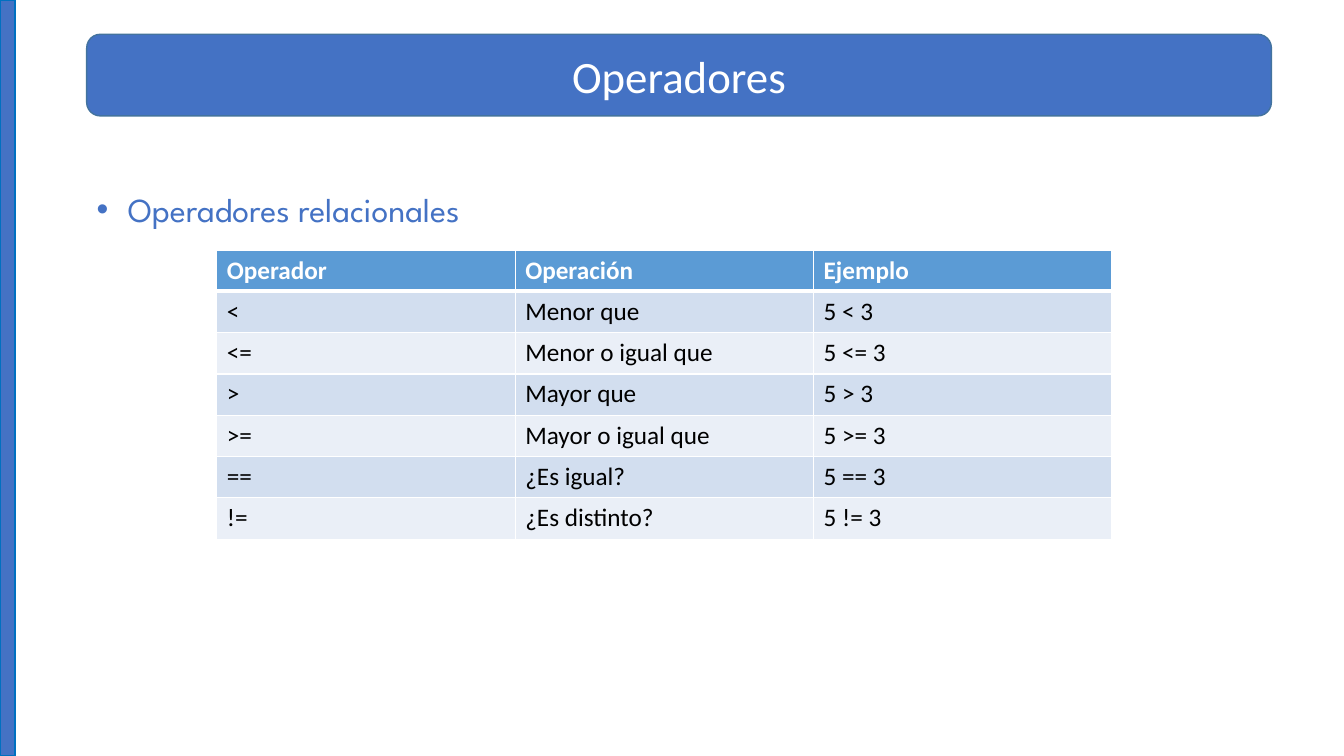
from lxml.etree import SubElement
from pptx import Presentation
from pptx.dml.color import RGBColor
from pptx.enum.shapes import MSO_SHAPE as Shape
from pptx.enum.text import MSO_ANCHOR as Anchor, MSO_AUTO_SIZE as AutoSize, PP_ALIGN as Align
from pptx.oxml.ns import qn
from pptx.util import Inches, Pt

TITLE = "Operadores"
SUBTITLE = "Operadores relacionales"
OPERATORS = [
    ("Operador", "Operación", "Ejemplo"),
    ("<", "Menor que", "5 < 3"),
    ("<=", "Menor o igual que", "5 <= 3"),
    (">", "Mayor que", "5 > 3"),
    (">=", "Mayor o igual que", "5 >= 3"),
    ("==", "¿Es igual?", "5 == 3"),
    ("!=", "¿Es distinto?", "5 != 3"),
]
COLORS = {
    "blue": "4472C4",
    "banner_edge": "43739E",
    "stripe_edge": "0070C0",
    "header": "5B9BD5",
    "odd_row": "D2DEEF",
    "even_row": "EAEFF7",
    "white": "FFFFFF",
    "black": "000000",
}
COLUMN_WIDTH, ROW_HEIGHT = 2.96, 0.41


def rgb(name):
    return RGBColor.from_string(COLORS[name])


def add_run(paragraph, text, size, font, color, bold=False):
    run = paragraph.add_run()
    run.text = text
    run.font.size = Pt(size)
    run.font.name = font
    run.font.bold = bold
    run.font.color.rgb = rgb(color)


def add_block(slide, kind, box, edge):
    block = slide.shapes.add_shape(kind, *map(Inches, box))
    block.shadow.inherit = False
    block.fill.solid()
    block.fill.fore_color.rgb = rgb("blue")
    block.line.color.rgb = rgb(edge)
    block.line.width = Pt(1)
    return block


def add_border(cell, side, width):
    border = SubElement(cell._tc.get_or_add_tcPr(), qn(f"a:ln{side}"), w=str(Pt(width)))
    fill = SubElement(border, qn("a:solidFill"))
    SubElement(fill, qn("a:srgbClr"), val=COLORS["white"])


def add_banner(slide):
    banner = add_block(slide, Shape.ROUNDED_RECTANGLE, (0.86, 0.34, 11.75, 0.81), "banner_edge")
    banner.text_frame.vertical_anchor = Anchor.MIDDLE
    heading = banner.text_frame.paragraphs[0]
    heading.alignment = Align.CENTER
    add_run(heading, TITLE, 32, "Calibri", "white")


def add_subtitle(slide):
    frame = slide.shapes.add_textbox(*map(Inches, (0.86, 1.42, 11.27, 0.78))).text_frame
    frame.word_wrap = True
    frame.auto_size = AutoSize.SHAPE_TO_FIT_TEXT
    bullet = frame.paragraphs[0]
    bullet.line_spacing = 2.0
    properties = bullet._p.get_or_add_pPr()
    properties.set("marL", str(Inches(0.31)))
    properties.set("indent", str(Inches(-0.31)))
    SubElement(properties, qn("a:buFont"), typeface="Arial")
    SubElement(properties, qn("a:buChar"), char="•")
    add_run(bullet, SUBTITLE, 24, "League Spartan", "blue")


def add_operators(slide):
    rows, columns = len(OPERATORS), len(OPERATORS[0])
    box = (2.15, 2.48, COLUMN_WIDTH * columns, ROW_HEIGHT * rows)
    table = slide.shapes.add_table(rows, columns, *map(Inches, box)).table
    for column in table.columns:
        column.width = Inches(COLUMN_WIDTH)
    for r, values in enumerate(OPERATORS):
        table.rows[r].height = Inches(ROW_HEIGHT)
        is_header = r == 0
        band = "header" if is_header else ("even_row", "odd_row")[r % 2]
        widths = {"L": 1, "R": 1, "T": 3 if r == 1 else 1, "B": 3 if is_header else 1}
        for c, value in enumerate(values):
            cell = table.cell(r, c)
            for side, width in widths.items():
                add_border(cell, side, width)
            cell.fill.solid()
            cell.fill.fore_color.rgb = rgb(band)
            color = "white" if is_header else "black"
            add_run(cell.text_frame.paragraphs[0], value, 18, "Calibri", color, is_header)


def main():
    deck = Presentation()
    deck.slide_width, deck.slide_height = Inches(13.33), Inches(7.5)
    slide = deck.slides.add_slide(deck.slide_layouts[6])
    add_banner(slide)
    add_block(slide, Shape.RECTANGLE, (0, 0, 0.15, 7.5), "stripe_edge")
    add_subtitle(slide)
    add_operators(slide)
    deck.save("out.pptx")


if __name__ == "__main__":
    main()
